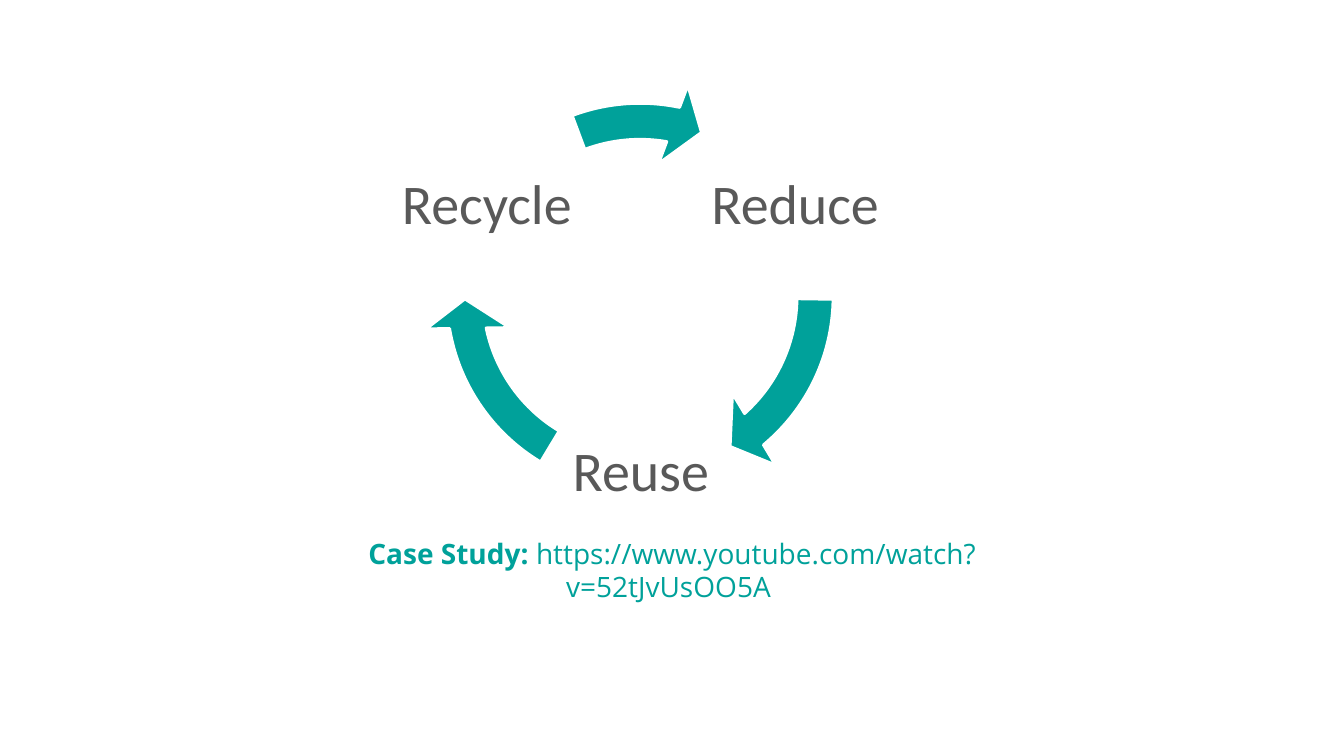
from dataclasses import dataclass

from pptx import Presentation
from pptx.dml.color import RGBColor
from pptx.enum.shapes import MSO_SHAPE as Preset
from pptx.enum.text import MSO_ANCHOR as Anchor, MSO_AUTO_SIZE as Fit, PP_ALIGN as Align
from pptx.util import Cm, Pt

TEAL, GREY, WHITE = "00A19A", "595959", "FFFFFF"
RING = 10.92  # side of the square around the cycle
LABEL = 4.62  # side of a label box


@dataclass
class Step:
    name: str
    left: float
    top: float
    tail: float  # arrow start, degrees clockwise from the right
    head: float  # arrow end


STEPS = [
    Step("Reduce", 17.73, 2.9, 0.87, 49.39),
    Step("Reuse", 13.84, 9.63, 121.01, 169.53),
    Step("Recycle", 9.96, 2.9, 249.46, 280.94),
]


def color(code: str) -> RGBColor:
    return RGBColor.from_string(code)


def add_label(slide, step: Step) -> None:
    box = slide.shapes.add_textbox(Cm(step.left), Cm(step.top), Cm(LABEL), Cm(LABEL))
    frame = box.text_frame
    frame.word_wrap = True
    frame.vertical_anchor = Anchor.MIDDLE
    frame.margin_left = frame.margin_right = Cm(0.15)
    frame.margin_top = frame.margin_bottom = Cm(0.15)
    line = frame.paragraphs[0]
    line.text = step.name
    line.alignment = Align.CENTER
    line.line_spacing = 0.9
    line.font.name, line.font.size = "Calibri", Pt(40)
    line.font.color.rgb = color(GREY)


def add_arrow(slide, step: Step) -> None:
    arrow = slide.shapes.add_shape(
        Preset.CIRCULAR_ARROW, Cm(10.67), Cm(2.01), Cm(RING), Cm(RING))
    # Angles are held in units of 1/0.6 degree
    values = (0.083, 9.6 * 0.6, step.head * 0.6, step.tail * 0.6, 0.096)
    for i, value in enumerate(values):
        arrow.adjustments[i] = value
    arrow.shadow.inherit = False
    arrow.fill.solid()
    arrow.fill.fore_color.rgb = color(TEAL)
    arrow.line.color.rgb = color(WHITE)
    arrow.line.width = Pt(2)


def add_study(slide) -> None:
    box = slide.shapes.add_textbox(Cm(6.63), Cm(13.39), Cm(20.62), Cm(1.12))
    frame = box.text_frame
    frame.word_wrap = True
    frame.auto_size = Fit.SHAPE_TO_FIT_TEXT
    line = frame.paragraphs[0]
    line.alignment = Align.CENTER
    line.space_after = Pt(6)
    line.font.name, line.font.size = "Open Sans", Pt(20)
    line.font.color.rgb = color(TEAL)
    title, link = line.add_run(), line.add_run()
    title.text, title.font.bold = "Case Study: ", True
    link.text = "https://www.youtube.com/watch?v=52tJvUsOO5A "


def main() -> None:
    deck = Presentation()
    deck.slide_width, deck.slide_height = Cm(33.87), Cm(19.05)
    slide = deck.slides.add_slide(deck.slide_layouts[6])

    # Case study line
    add_study(slide)

    # Cycle of labels and arrows
    for step in STEPS:
        add_label(slide, step)
        add_arrow(slide, step)

    deck.save("out.pptx")


if __name__ == "__main__":
    main()
